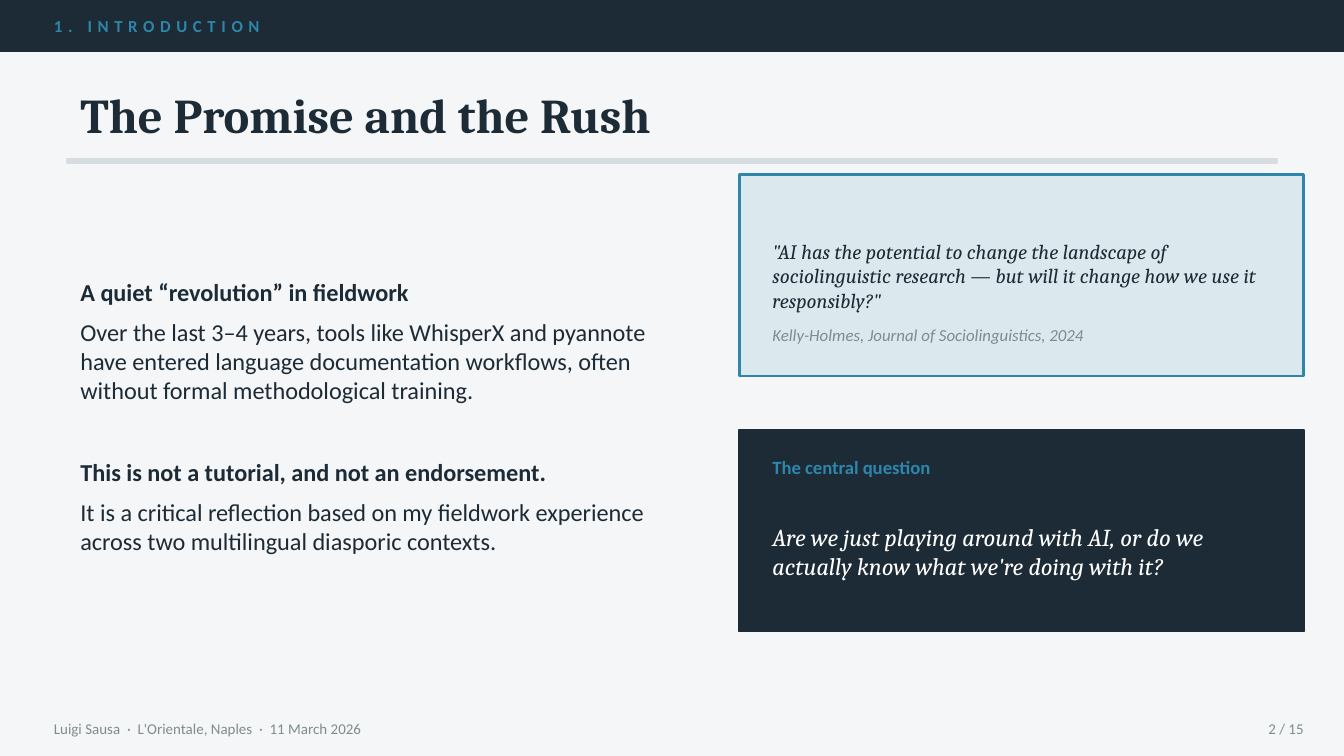
from lxml import etree
from pptx import Presentation
from pptx.dml.color import RGBColor
from pptx.enum.shapes import MSO_SHAPE
from pptx.enum.text import MSO_ANCHOR, PP_ALIGN
from pptx.oxml.ns import qn
from pptx.util import Cm, Pt

RECT = MSO_SHAPE.RECTANGLE
MIDDLE = MSO_ANCHOR.MIDDLE
LEFT, RIGHT = PP_ALIGN.LEFT, PP_ALIGN.RIGHT

NAVY = RGBColor(0x1C, 0x2B, 0x36)
TEAL = RGBColor(0x2E, 0x86, 0xAB)
RULE = RGBColor(0xD5, 0xDD, 0xE0)
GRAY = RGBColor(0x7F, 0x8C, 0x8D)
PAPER = RGBColor(0xF4, 0xF6, 0xF7)
WHITE = RGBColor(0xFF, 0xFF, 0xFF)

SANS, SERIF = "Calibri", "Cambria"

MARGIN, EDGE = 1.27, 1.02
CONTENT_W = 22.86
BAR_H = 0.97
CARD_X, CARD_W, CARD_H = 13.97, 10.67, 3.81
CARD_TEXT_X, CARD_TEXT_W = 14.35, 9.91
QUOTE_Y, QUESTION_Y = 3.3, 8.13
FOOTER_Y, FOOTER_H = 13.41, 0.71


class Deck:
    def __init__(self, width, height):
        self.prs = Presentation()
        self.prs.slide_width, self.prs.slide_height = Cm(width), Cm(height)
        self.s = self.prs.slides.add_slide(self.prs.slide_layouts[6])
        fill = self.s.background.fill
        fill.solid()
        fill.fore_color.rgb = PAPER

    def box(self, x, y, w, h, color, line=1, alpha=None):
        sp = self.s.shapes.add_shape(RECT, Cm(x), Cm(y), Cm(w), Cm(h))
        sp.shadow.inherit = False
        sp.fill.solid()
        sp.fill.fore_color.rgb = color
        sp.line.color.rgb = color
        sp.line.width = Pt(line)
        if alpha is not None:
            clr = sp.fill._xPr.find(qn("a:solidFill"))[0]
            etree.SubElement(clr, qn("a:alpha")).set("val", str(alpha * 1000))

    def frame(self, x, y, w, h, inset=True):
        tf = self.s.shapes.add_textbox(Cm(x), Cm(y), Cm(w), Cm(h)).text_frame
        tf.word_wrap = True
        tf.vertical_anchor = MIDDLE
        if not inset:
            tf.margin_left = tf.margin_right = 0
            tf.margin_top = tf.margin_bottom = 0
        return tf

    def style(self, p, size, font, color, bold=False, italic=False, spacing=None):
        for r in p.runs:
            r.font.size = Pt(size)
            r.font.name = font
            r.font.color.rgb = color
            r.font.bold = bold
            r.font.italic = italic
            if spacing:
                r.font._element.set("spc", str(spacing * 100))

    def text(self, x, y, w, h, text, size, font, color, inset=True, align=LEFT, **kw):
        tf = self.frame(x, y, w, h, inset)
        tf.text = text
        p = tf.paragraphs[0]
        p.alignment = align
        self.style(p, size, font, color, **kw)

    def sections(self, x, y, w, h, sections, size, gap):
        tf = self.frame(x, y, w, h)
        for i, section in enumerate(sections):
            for j, line in enumerate(section):
                first = i == 0 and j == 0
                p = tf.paragraphs[0] if first else tf.add_paragraph()
                p.text = line
                p.space_after = Pt(6)
                if i > 0 and j == 0:
                    p.space_before = Pt(gap)
                self.style(p, size, SANS, NAVY, bold=j == 0)


def main():
    deck = Deck(25.4, 14.29)

    deck.box(0, 0, 25.4, BAR_H, NAVY)
    deck.text(EDGE, 0, 23.37, BAR_H, "1. INTRODUCTION", 9, SANS, TEAL,
              inset=False, bold=True, spacing=3)
    deck.text(MARGIN, 1.27, CONTENT_W, 1.78, "The Promise and the Rush",
              26, SERIF, NAVY, bold=True)
    deck.box(MARGIN, 3, CONTENT_W, 0.08, RULE)

    deck.sections(MARGIN, 3.3, 11.94, 9.14, [
        ("A quiet “revolution” in fieldwork",
         "Over the last 3–4 years, tools like WhisperX and pyannote have entered "
         "language documentation workflows, often without formal methodological "
         "training."),
        ("This is not a tutorial, and not an endorsement.",
         "It is a critical reflection based on my fieldwork experience across two "
         "multilingual diasporic contexts."),
    ], size=13, gap=22)

    deck.box(CARD_X, QUOTE_Y, CARD_W, CARD_H, TEAL, line=1.5, alpha=12)
    deck.text(CARD_TEXT_X, QUOTE_Y + 0.26, CARD_TEXT_W, 3.3,
              '"AI has the potential to change the landscape of sociolinguistic '
              'research — but will it change how we use it responsibly?"',
              11, SERIF, NAVY, italic=True)
    deck.text(CARD_TEXT_X, QUOTE_Y + 2.64, CARD_TEXT_W, 0.76,
              "Kelly-Holmes, Journal of Sociolinguistics, 2024",
              9, SANS, GRAY, italic=True)

    deck.box(CARD_X, QUESTION_Y, CARD_W, CARD_H, NAVY)
    deck.text(CARD_TEXT_X, QUESTION_Y + 0.25, CARD_TEXT_W, 0.89,
              "The central question", 10, SANS, TEAL, bold=True)
    deck.text(CARD_TEXT_X, QUESTION_Y + 1.14, CARD_TEXT_W, 2.29,
              "Are we just playing around with AI, or do we actually know what "
              "we're doing with it?", 13, SERIF, WHITE, italic=True)

    deck.text(EDGE, FOOTER_Y, 20.32, FOOTER_H,
              "Luigi Sausa  ·  L'Orientale, Naples  ·  11 March 2026",
              8, SANS, GRAY, inset=False)
    deck.text(22.86, FOOTER_Y, 1.78, FOOTER_H, "2 / 15", 8, SANS, GRAY,
              inset=False, align=RIGHT)

    deck.prs.save("out.pptx")


if __name__ == "__main__":
    main()
